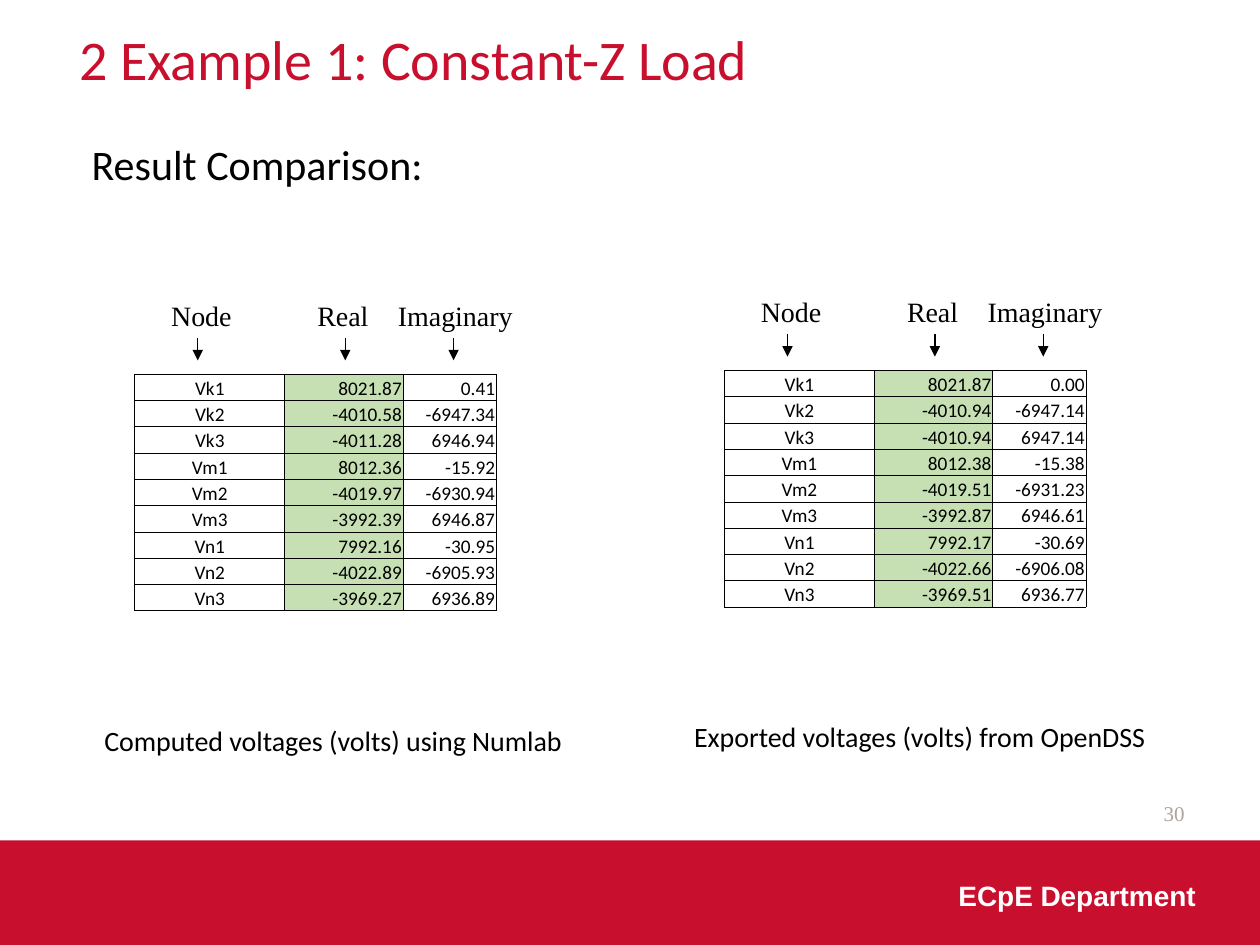
from dataclasses import dataclass

from lxml import etree
from pptx import Presentation
from pptx import util as u
from pptx.dml.color import RGBColor
from pptx.enum import shapes, text
from pptx.oxml import ns

COLORS = {
    "red": "C8102E",
    "green": "C6E0B4",
    "gray": "ACA39A",
    "black": "000000",
    "white": "FFFFFF",
}
ALIGN = text.PP_ALIGN
ANCHOR = text.MSO_ANCHOR
NODES = ("Vk1", "Vk2", "Vk3", "Vm1", "Vm2", "Vm3", "Vn1", "Vn2", "Vn3")
COLUMN_WIDTHS = (1.19, 0.94, 0.74)
ROW_HEIGHT = 1.88 / len(NODES)


@dataclass(frozen=True)
class Heading:
    label: str
    left: float
    width: float
    arrow: float


@dataclass(frozen=True)
class Result:
    left: float
    top: float
    caption: str
    caption_width: float
    voltages: tuple[tuple[str, str], ...]


HEADINGS = (
    Heading("Node", 0.19, 0.69, 0.5),
    Heading("Real", 1.35, 0.61, 1.67),
    Heading("Imaginary", 1.99, 1.13, 2.53),
)
RESULTS = (
    Result(
        1.07, 2.97, "Computed voltages (volts) using Numlab", 3.83,
        (
            ("8021.87", "0.41"), ("-4010.58", "-6947.34"), ("-4011.28", "6946.94"),
            ("8012.36", "-15.92"), ("-4019.97", "-6930.94"), ("-3992.39", "6946.87"),
            ("7992.16", "-30.95"), ("-4022.89", "-6905.93"), ("-3969.27", "6936.89"),
        ),
    ),
    Result(
        5.75, 2.94, "Exported voltages (volts) from OpenDSS", 3.92,
        (
            ("8021.87", "0.00"), ("-4010.94", "-6947.14"), ("-4010.94", "6947.14"),
            ("8012.38", "-15.38"), ("-4019.51", "-6931.23"), ("-3992.87", "6946.61"),
            ("7992.17", "-30.69"), ("-4022.66", "-6906.08"), ("-3969.51", "6936.77"),
        ),
    ),
)


def write(frame, content: str, *, size: float, font: str = "Calibri",
          color: str = "black", bold: bool = False, align=ALIGN.LEFT) -> None:
    """Fill a text frame with one formatted paragraph."""
    para = frame.paragraphs[0]
    para.alignment = align
    span = para.add_run()
    span.text = content
    span.font.name = font
    span.font.size = u.Pt(size)
    span.font.bold = bold
    span.font.color.rgb = RGBColor.from_string(COLORS[color])


def add_text(page, content: str, left: float, top: float, width: float, height: float,
             *, wrap: bool = True, anchor=ANCHOR.TOP, **style) -> None:
    """Add a text box holding one paragraph."""
    box = page.shapes.add_textbox(
        u.Inches(left), u.Inches(top), u.Inches(width), u.Inches(height))
    box.text_frame.word_wrap = wrap
    box.text_frame.vertical_anchor = anchor
    write(box.text_frame, content, **style)


def add_arrow(page, x: float, top: float, bottom: float) -> None:
    """Draw a thin downward arrow."""
    arrow = page.shapes.add_connector(
        shapes.MSO_CONNECTOR.STRAIGHT,
        u.Inches(x), u.Inches(top), u.Inches(x), u.Inches(bottom))
    arrow.line.color.rgb = RGBColor.from_string(COLORS["black"])
    arrow.line.width = u.Pt(0.75)
    etree.SubElement(arrow.line._get_or_add_ln(), ns.qn("a:tailEnd"), type="triangle")
    etree.SubElement(arrow._element.spPr, ns.qn("a:effectLst"))


def add_borders(cell) -> None:
    """Outline all four sides of a cell."""
    properties = cell._tc.get_or_add_tcPr()
    for index, side in enumerate(("lnL", "lnR", "lnT", "lnB")):
        line = etree.Element(ns.qn(f"a:{side}"), w=str(u.Pt(0.5)))
        fill = etree.SubElement(line, ns.qn("a:solidFill"))
        etree.SubElement(fill, ns.qn("a:srgbClr"), val=COLORS["black"])
        properties.insert(index, line)


def add_cell(cell, content: str, column: int) -> None:
    """Format one table cell according to its column."""
    cell.margin_left = cell.margin_right = cell.margin_top = u.Inches(0.01)
    cell.margin_bottom = 0
    cell.vertical_anchor = ANCHOR.BOTTOM
    if column == 1:
        cell.fill.solid()
        cell.fill.fore_color.rgb = RGBColor.from_string(COLORS["green"])
    else:
        cell.fill.background()
    write(cell.text_frame, content, size=11, align=ALIGN.RIGHT if column else ALIGN.CENTER)
    add_borders(cell)


def add_result(page, result: Result) -> None:
    """Draw a voltage table with its headings, arrows and caption."""
    table = page.shapes.add_table(
        len(NODES), len(COLUMN_WIDTHS), u.Inches(result.left), u.Inches(result.top),
        u.Inches(sum(COLUMN_WIDTHS)), u.Inches(ROW_HEIGHT * len(NODES))).table
    table.first_row = table.horz_banding = False
    for column, width in zip(table.columns, COLUMN_WIDTHS):
        column.width = u.Inches(width)
    for row, (node, voltage) in enumerate(zip(NODES, result.voltages)):
        table.rows[row].height = u.Inches(ROW_HEIGHT)
        for column, content in enumerate((node, *voltage)):
            add_cell(table.cell(row, column), content, column)

    add_text(page, result.caption, result.left - 0.34, result.top + 2.72,
             result.caption_width, 0.37, wrap=False, size=16)
    for heading in HEADINGS:
        add_text(page, heading.label, result.left + heading.left, result.top - 0.65,
                 heading.width, 0.37, wrap=False, size=16, font="Times New Roman")
        add_arrow(page, result.left + heading.arrow, result.top - 0.29, result.top - 0.11)


def add_footer(page) -> None:
    """Draw the footer band, page number and department name."""
    band = page.shapes.add_shape(
        shapes.MSO_SHAPE.RECTANGLE, 0, u.Inches(6.67), u.Inches(10), u.Inches(0.83))
    band.shadow.inherit = False
    band.fill.solid()
    band.fill.fore_color.rgb = RGBColor.from_string(COLORS["red"])
    band.line.fill.background()
    add_text(page, "30", 7.17, 6.25, 2.33, 0.4, anchor=ANCHOR.MIDDLE, size=12,
             font="Times New Roman", color="gray", align=ALIGN.RIGHT)
    add_text(page, "ECpE Department", 6.92, 6.92, 2.67, 0.42, size=16,
             font="Arial", color="white", bold=True, align=ALIGN.RIGHT)


def main() -> None:
    """Build and save the deck."""
    deck = Presentation()
    deck.slide_width, deck.slide_height = u.Inches(10), u.Inches(7.5)
    page = deck.slides.add_slide(deck.slide_layouts[6])
    add_footer(page)
    add_text(page, "2 Example 1: Constant-Z Load", 0.53, 0.08, 9.38, 0.77,
             anchor=ANCHOR.MIDDLE, size=32, color="red")
    add_text(page, "Result Comparison:", 0.63, 1.05, 8.54, 0.5, size=24)
    for result in RESULTS:
        add_result(page, result)
    deck.save("out.pptx")


if __name__ == "__main__":
    main()
